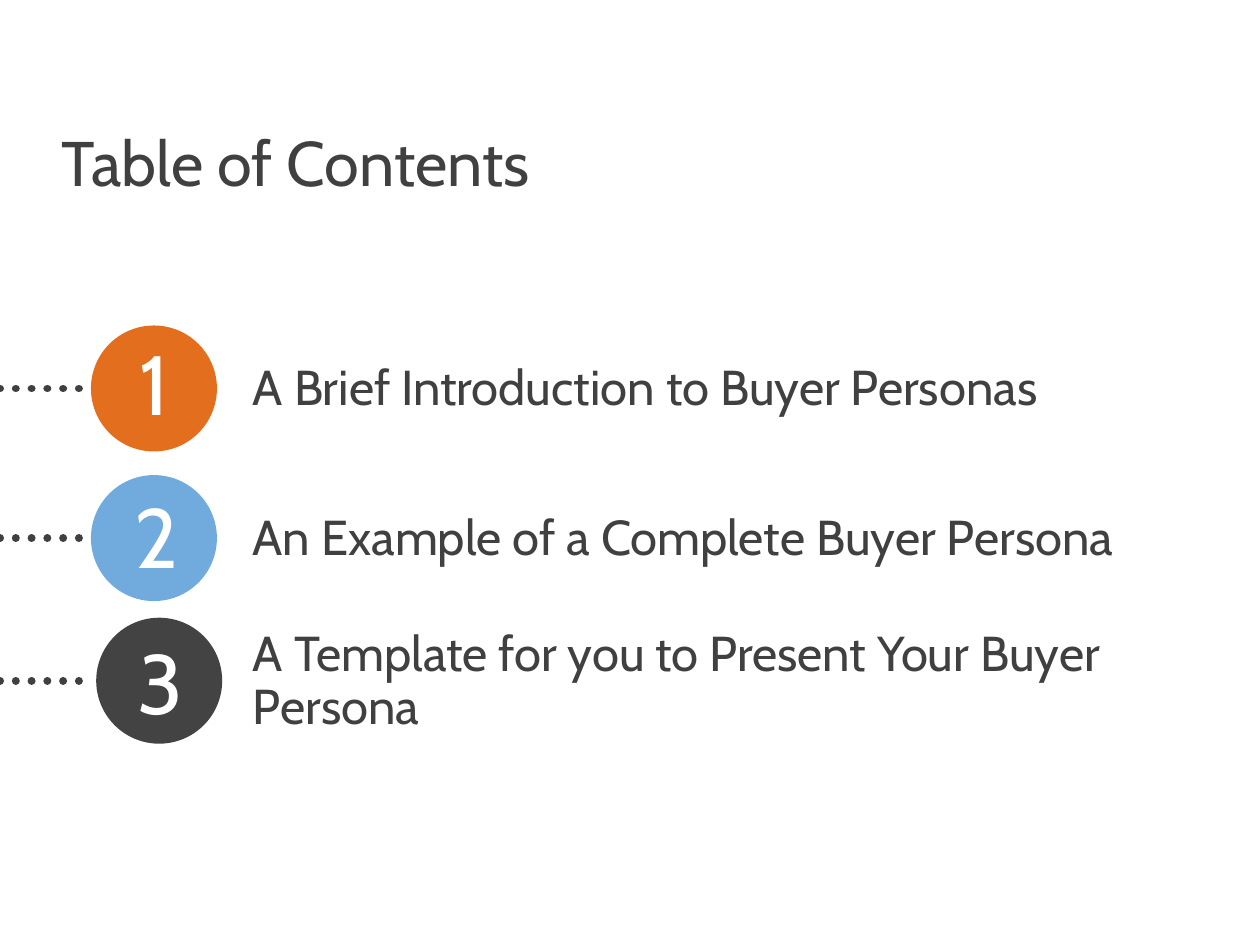
import pptx
import pptx.util
import pptx.dml.color
import pptx.enum.dml
import pptx.enum.shapes
import pptx.enum.text
import pptx.oxml.ns
from lxml import etree

Pt = pptx.util.Pt
RGBColor = pptx.dml.color.RGBColor
MSO_ANCHOR = pptx.enum.text.MSO_ANCHOR
PP_ALIGN = pptx.enum.text.PP_ALIGN
MSO_SHAPE = pptx.enum.shapes.MSO_SHAPE

DARK = RGBColor(0x40, 0x40, 0x40)
WHITE = RGBColor(0xFF, 0xFF, 0xFF)
ORANGE = RGBColor(0xE3, 0x6F, 0x1E)
BLUE = RGBColor(0x71, 0xAA, 0xDC)
CHARCOAL = RGBColor(0x43, 0x43, 0x43)
FONT = "Cabin"
BADGE = 72


def write(frame, text, size, color, align=PP_ALIGN.LEFT, spacing=0.9):
    frame.word_wrap = True
    paragraph = frame.paragraphs[0]
    paragraph.alignment = align
    paragraph.line_spacing = spacing
    run = paragraph.add_run()
    run.text = text
    run.font.size = Pt(size)
    run.font.name = FONT
    run.font.color.rgb = color


def add_dotted_lead(slide, y):
    """Draw the round-dotted line from the slide edge to a number badge."""
    lead = slide.shapes.add_connector(
        pptx.enum.shapes.MSO_CONNECTOR.STRAIGHT, Pt(0), Pt(y), Pt(54), Pt(y))
    lead.line.color.rgb = DARK
    lead.line.width = Pt(4.5)
    lead.line.dash_style = pptx.enum.dml.MSO_LINE.ROUND_DOT
    lead.line._get_or_add_ln().set("cap", "rnd")
    etree.SubElement(lead._element.spPr, pptx.oxml.ns.qn("a:effectLst"))


deck = pptx.Presentation()
deck.slide_width = Pt(720)
deck.slide_height = Pt(540)
slide = deck.slides.add_slide(deck.slide_layouts[5])

heading = slide.shapes.title
heading.left, heading.top, heading.width, heading.height = Pt(28), Pt(72), Pt(314), Pt(49)
heading.text_frame.auto_size = pptx.enum.text.MSO_AUTO_SIZE.NONE
heading.text_frame.vertical_anchor = MSO_ANCHOR.TOP
write(heading.text_frame, "Table of Contents", 36, DARK)

# topic, badge colour, row centre, badge left, number left, number top, topic width
chapters = [
    ("A Brief Introduction to Buyer Personas", ORANGE, 222, 52, 49, 186, 526),
    ("An Example of a Complete Buyer Persona", BLUE, 307.5, 52, 50.5, 273.5, 526),
    ("A Template for you to Present Your Buyer Persona", CHARCOAL, 389, 55, 52.5, 356.5, 555),
]
for number, (topic, color, centre, badge_left, number_left, number_top, topic_width) in enumerate(chapters, 1):
    add_dotted_lead(slide, centre)

    badge = slide.shapes.add_shape(
        MSO_SHAPE.OVAL, Pt(badge_left), Pt(centre - BADGE / 2), Pt(BADGE), Pt(BADGE))
    badge.shadow.inherit = False
    badge.fill.solid()
    badge.fill.fore_color.rgb = color
    badge.line.fill.background()

    numeral = slide.shapes.add_textbox(Pt(number_left), Pt(number_top), Pt(78), Pt(65.5))
    write(numeral.text_frame, str(number), 48, WHITE, PP_ALIGN.CENTER, 1.0)

    entry = slide.shapes.add_textbox(Pt(141.5), Pt(centre - 23.5), Pt(topic_width), Pt(45.5))
    frame = entry.text_frame
    frame.margin_left = frame.margin_top = frame.margin_right = Pt(3)
    frame.margin_bottom = Pt(0)
    frame.vertical_anchor = MSO_ANCHOR.MIDDLE
    write(frame, topic, 28, DARK)

deck.save("out.pptx")
